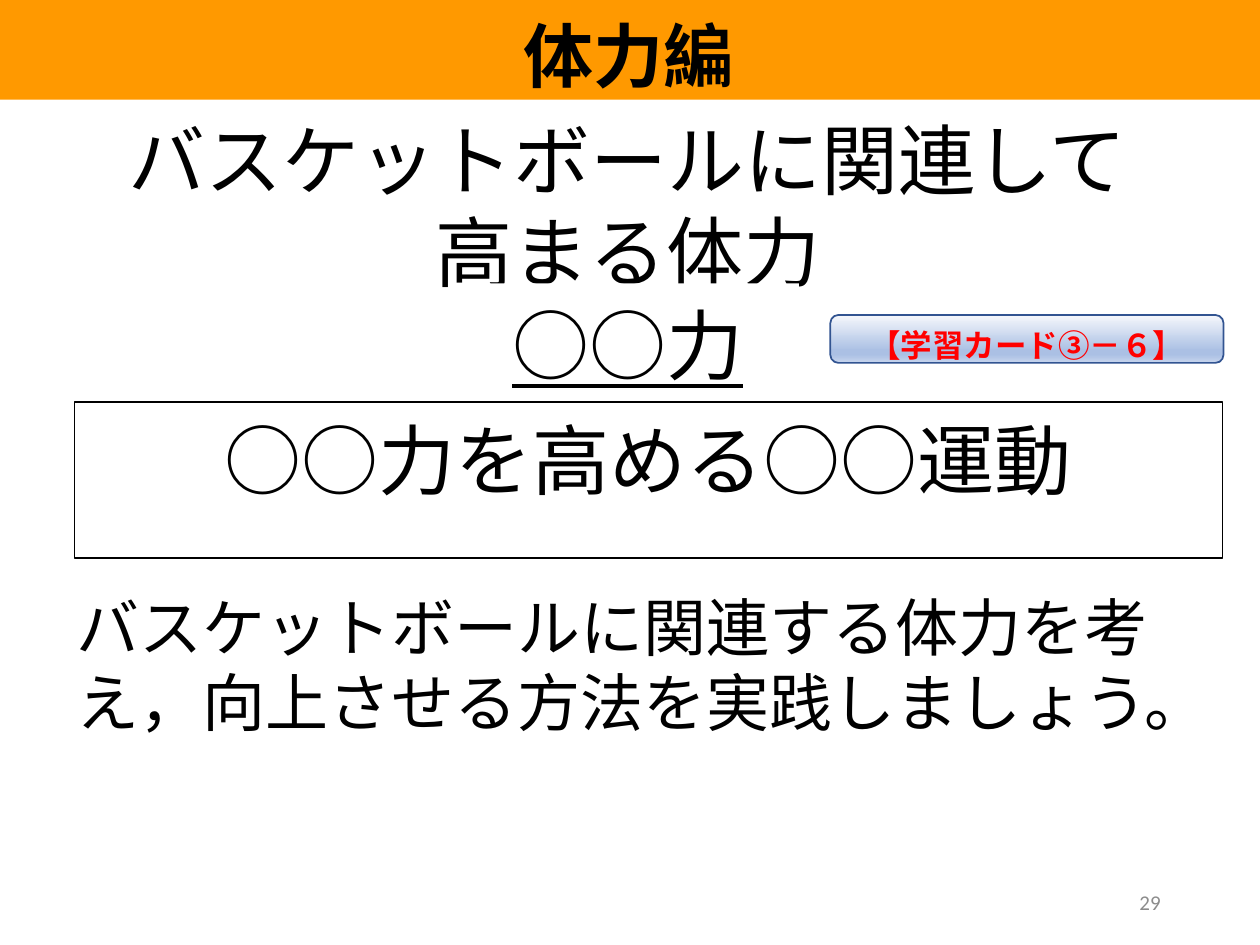
from dataclasses import dataclass
from typing import Optional

import lxml.etree
import pptx
import pptx.dml.color
import pptx.enum.dml
import pptx.enum.shapes
import pptx.enum.text
import pptx.oxml.ns
import pptx.util

Inches = pptx.util.Inches
Pt = pptx.util.Pt
ALIGN = pptx.enum.text.PP_ALIGN
ANCHOR = pptx.enum.text.MSO_ANCHOR
SHAPE = pptx.enum.shapes.MSO_SHAPE

COLORS = {
    "black": "000000", "white": "FFFFFF", "red": "FF0000", "grey": "8C8C8C",
    "orange": "FF9900", "navy": "325491",
    "pale": "F6F8FC", "blue": "ABC0E4", "light": "C7D5ED",
}
JAPANESE_FONT = "Noto Sans CJK JP"
LINE_PITCH = 1.19  # line height as a share of the text size
DROP = 0.0011  # inches the text sits lower per point of size
BADGE_STOPS = ((0, "pale"), (74, "blue"), (83, "blue"), (100, "light"))


@dataclass
class Block:
    text: str
    box: tuple[float, float, float, float]
    size: float
    font: str = "Calibri"
    color: str = "black"
    bold: bool = False
    underline: bool = False
    align: ALIGN = ALIGN.CENTER
    anchor: ANCHOR = ANCHOR.TOP
    insets: tuple[float, float] = (0.1, 0.05)
    wrap: bool = True
    shape: Optional[SHAPE] = SHAPE.RECTANGLE  # None for a text box
    fill: Optional[str] = None
    line: Optional[str] = None
    line_width: float = 0.75
    gradient: Optional[tuple[tuple[int, str], ...]] = None


def rgb(name: str) -> pptx.dml.color.RGBColor:
    return pptx.dml.color.RGBColor.from_string(COLORS[name])


def apply_gradient(fill: pptx.dml.fill.FillFormat, shape: pptx.shapes.autoshape.Shape,
                   stops: tuple[tuple[int, str], ...]) -> None:
    """Fill from top to bottom with the given stops."""
    qn = pptx.oxml.ns.qn
    fill.gradient()
    fill.gradient_angle = 270
    stop_list = next(shape.element.iter(qn("a:gsLst")))
    for old_stop in list(stop_list):
        stop_list.remove(old_stop)
    for percent, color in stops:
        stop = lxml.etree.SubElement(stop_list, qn("a:gs"), pos=str(percent * 1000))
        lxml.etree.SubElement(stop, qn("a:srgbClr"), val=COLORS[color])


def write_text(frame: pptx.text.text.TextFrame, block: Block) -> None:
    side, edge = block.insets
    drop = block.size * DROP
    frame.word_wrap = block.wrap
    frame.vertical_anchor = block.anchor
    frame.margin_left = frame.margin_right = Inches(side)
    frame.margin_top = Inches(edge + drop)
    frame.margin_bottom = Inches(max(edge - drop, 0))

    paragraph = frame.paragraphs[0]
    paragraph.alignment = block.align
    paragraph.line_spacing = Pt(block.size * LINE_PITCH)
    run = paragraph.add_run()
    run.text = block.text
    run.font.size = Pt(block.size)
    run.font.name = block.font
    run.font.bold = block.bold
    run.font.underline = block.underline
    run.font.color.rgb = rgb(block.color)
    east_asian = lxml.etree.Element(pptx.oxml.ns.qn("a:ea"), typeface=JAPANESE_FONT)
    run.font._element.find(pptx.oxml.ns.qn("a:latin")).addnext(east_asian)


def draw_block(slide: pptx.slide.Slide, block: Block) -> None:
    box = [Inches(length) for length in block.box]
    if block.shape is None:
        panel = slide.shapes.add_textbox(*box)
    else:
        panel = slide.shapes.add_shape(block.shape, *box)
        panel.shadow.inherit = False
        if block.gradient:
            apply_gradient(panel.fill, panel, block.gradient)
        elif block.fill:
            panel.fill.solid()
            panel.fill.fore_color.rgb = rgb(block.fill)
        else:
            panel.fill.background()
        if block.line:
            panel.line.color.rgb = rgb(block.line)
            panel.line.width = Pt(block.line_width)
        else:
            panel.line.fill.background()
    write_text(panel.text_frame, block)


BLOCKS = [
    # Framed exercise
    Block("○○力を高める○○運動", (0.59, 3.19, 9.11, 1.24), 44, "Arial",
          insets=(0.02, 0.04), line="black"),
    # Heading and the named fitness
    Block("バスケットボールに関連して高まる体力", (0.82, 0.79, 8.33, 1.58), 44,
          anchor=ANCHOR.MIDDLE, fill="white"),
    Block("○○力", (3.63, 2.25, 2.71, 0.87), 44, underline=True,
          anchor=ANCHOR.MIDDLE, fill="white"),
    # Page number
    Block("29", (7.06, 6.95, 2.25, 0.4), 12, color="grey", align=ALIGN.RIGHT,
          anchor=ANCHOR.MIDDLE, shape=None),
    # Instruction
    Block("バスケットボールに関連する体力を考え，向上させる方法を実践しましょう。",
          (0.59, 4.6, 8.98, 2.19), 36, "Arial", align=ALIGN.LEFT,
          insets=(0.02, 0.04), shape=None),
    # Study card badge
    Block("【学習カード③－６】", (6.59, 2.5, 3.12, 0.38), 18, "Arial", "red", bold=True,
          shape=SHAPE.ROUNDED_RECTANGLE, line="navy", line_width=1,
          gradient=BADGE_STOPS),
    # Title band
    Block("体力編", (-0.02, 0, 10.02, 0.79), 40, JAPANESE_FONT, bold=True,
          anchor=ANCHOR.MIDDLE, insets=(0.07, 0.04), wrap=False, fill="orange"),
]


def main() -> None:
    deck = pptx.Presentation()
    deck.slide_width, deck.slide_height = Inches(10), Inches(7.5)
    slide = deck.slides.add_slide(deck.slide_layouts[6])
    for block in BLOCKS:
        draw_block(slide, block)
    deck.save("out.pptx")


if __name__ == "__main__":
    main()
